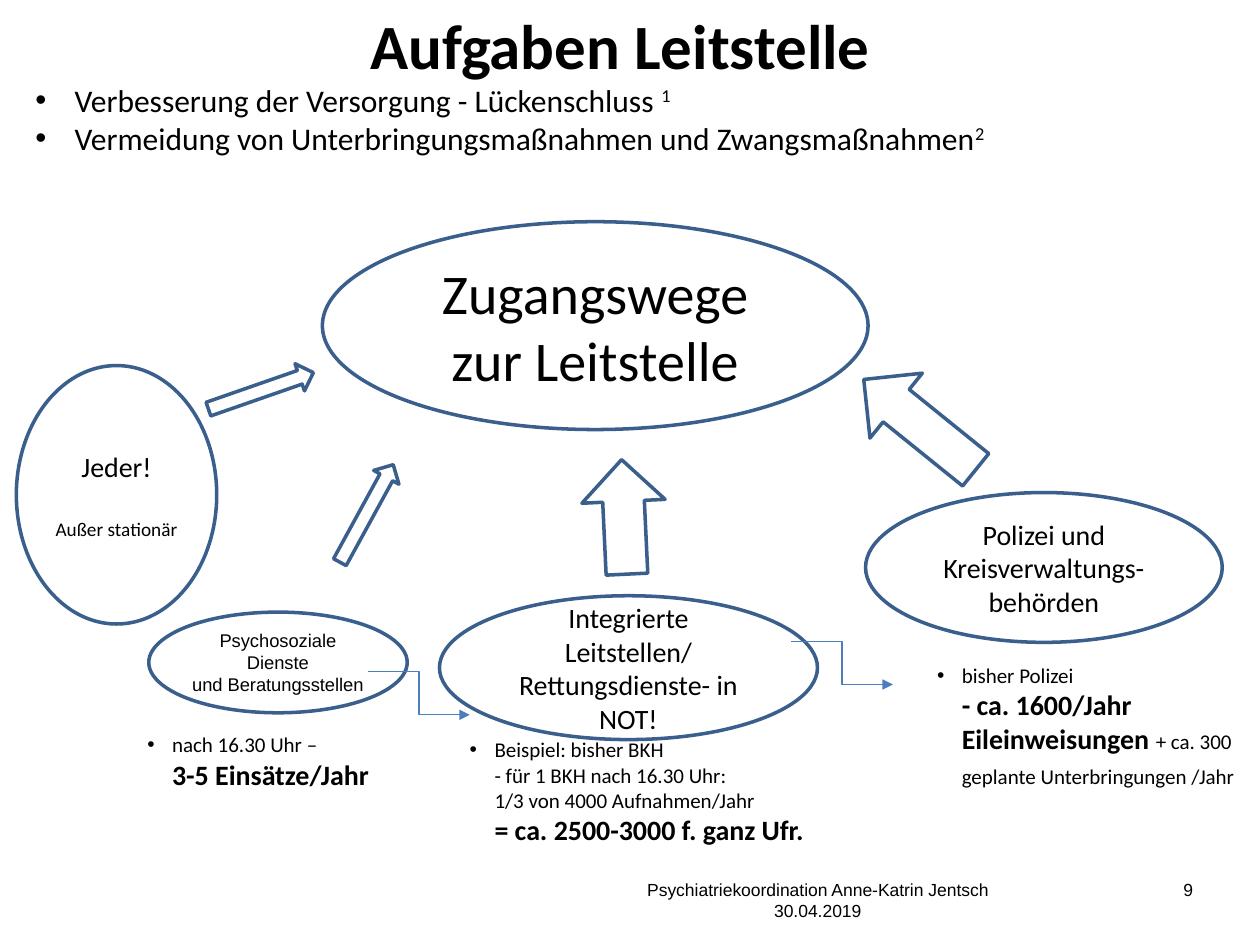
from lxml import etree
from pptx import Presentation
from pptx import util as u
from pptx.dml.color import RGBColor
from pptx.enum import shapes, text
from pptx.oxml.ns import qn

BLACK = RGBColor(0x00, 0x00, 0x00)
WHITE = RGBColor(0xFF, 0xFF, 0xFF)
OUTLINE = RGBColor(0x3A, 0x5F, 0x8C)
CONNECTOR = RGBColor(0x4B, 0x7E, 0xBC)
CENTER = text.PP_ALIGN.CENTER
TOP = text.MSO_ANCHOR.TOP


def cm(*values):
    return [u.Cm(v) for v in values]


def place(sp, box):
    sp.left, sp.top, sp.width, sp.height = cm(*box)


def add_run(p, content, size, bold=False, font="Calibri", superscript=False):
    r = p.add_run()
    r.text = content
    r.font.size = u.Pt(size)
    r.font.bold = bold
    r.font.name = font
    r.font.color.rgb = BLACK
    if superscript:
        r.font._element.set("baseline", "30000")


def indent(p, hang, bullet=True):
    """Indent a paragraph, with a hanging bullet or aligned to its text."""
    pPr = p._p.get_or_add_pPr()
    pPr.set("marL", str(u.Cm(hang)))
    pPr.set("indent", str(-u.Cm(hang) if bullet else 0))
    if bullet:
        etree.SubElement(pPr, qn("a:buFont"), typeface="Arial")
        etree.SubElement(pPr, qn("a:buChar"), char="•")
    else:
        etree.SubElement(pPr, qn("a:buNone"))


def set_frame(sp, anchor=TOP):
    tf = sp.text_frame
    tf.word_wrap = True
    tf.auto_size = text.MSO_AUTO_SIZE.NONE
    tf.vertical_anchor = anchor
    return tf


def add_outline_shape(s, kind, box, rotation=0):
    sp = s.shapes.add_shape(kind, *cm(*box))
    sp.shadow.inherit = False
    sp.fill.background()
    sp.line.color.rgb = OUTLINE
    sp.line.width = u.Pt(2)
    sp.rotation = rotation
    return sp


def add_ellipse(s, box, paragraphs, font="Calibri", side=0.25):
    """Draw an ellipse; paragraphs holds (text, size, space before)."""
    sp = add_outline_shape(s, shapes.MSO_SHAPE.OVAL, box)
    tf = set_frame(sp, text.MSO_ANCHOR.MIDDLE)
    tf.margin_left = tf.margin_right = u.Cm(side)
    for i, (content, size, before) in enumerate(paragraphs):
        p = tf.add_paragraph() if i else tf.paragraphs[0]
        p.alignment = CENTER
        p.space_before = u.Pt(before)
        add_run(p, content, size, font=font)
    return sp


def add_elbow(s, x, y):
    c = s.shapes.add_connector(shapes.MSO_CONNECTOR.ELBOW,
                               *cm(x, y, x + 2.05, y + 0.87))
    c.line.color.rgb = CONNECTOR
    c.line.width = u.Pt(0.75)
    etree.SubElement(c.line._get_or_add_ln(), qn("a:tailEnd"), type="triangle")
    etree.SubElement(c._element.spPr, qn("a:effectLst"))


def add_note(s, box, lines):
    """Add a bulleted note; each line is a list of (text, size, bold)."""
    sp = s.shapes.add_textbox(*cm(*box))
    p = set_frame(sp).paragraphs[0]
    indent(p, 0.5)
    for i, line in enumerate(lines):
        if i:
            p.add_line_break()
        for content, size, bold in line:
            add_run(p, content, size, bold)
    return sp


def add_footer(s, box, lines, alignment):
    tf = set_frame(s.shapes.add_textbox(*cm(*box)))
    p = tf.paragraphs[0]
    p.alignment = alignment
    for i, line in enumerate(lines):
        if i:
            p.add_line_break()
        add_run(p, line, 10, font="Arial")


def fill_title(sp):
    place(sp, (1.09, 0.13, 22.83, 2.21))
    tf = set_frame(sp)
    tf.margin_top = 0
    p = tf.paragraphs[0]
    p.alignment = CENTER
    add_run(p, "Aufgaben Leitstelle", 36, bold=True)


def fill_goals(sp):
    place(sp, (0.46, 1.5, 22.83, 1.8))
    tf = set_frame(sp)
    goals = [("Verbesserung der Versorgung - Lückenschluss ", "1"),
             ("Vermeidung von Unterbringungsmaßnahmen und Zwangsmaßnahmen", "2")]
    for i, (goal, mark) in enumerate(goals):
        p = tf.add_paragraph() if i else tf.paragraphs[0]
        p.space_before = u.Pt(0)
        indent(p, 0.79)
        add_run(p, goal, 18)
        add_run(p, mark, 18, superscript=True)


def main():
    prs = Presentation()
    prs.slide_width, prs.slide_height = cm(25.4, 19.05)
    s = prs.slides.add_slide(prs.slide_layouts[1])
    fill_title(s.shapes.title)
    fill_goals(s.placeholders[1])

    hub = add_ellipse(s, (6.5, 4.47, 11, 4.19),
                      [("Zugangswege zur Leitstelle", 32, 0)])
    hub.fill.solid()
    hub.fill.fore_color.rgb = WHITE
    add_ellipse(s, (0.33, 7.37, 4.04, 5.21),
                [("Jeder!", 16, 0), ("Außer stationär", 11, 19.5)], side=0.1)
    add_ellipse(s, (3, 12.34, 5.21, 2.03),
                [("Psychosoziale Dienste", 10.5, 0),
                 ("und Beratungsstellen", 10.5, 0)], font="Arial", side=0.1)
    add_ellipse(s, (17.45, 9.93, 7.19, 3.02),
                [("Polizei und Kreisverwaltungs-behörden", 16, 0)])
    add_ellipse(s, (8.86, 12.01, 7.62, 2.9),
                [("Integrierte Leitstellen/ Rettungsdienste- in NOT!", 16, 0)])

    for box, rotation in [((4.14, 7.59, 2.24, 0.58), 340.8),
                          ((6.27, 10.06, 2.24, 0.58), 298.7),
                          ((11.43, 9.58, 2.31, 1.68), 267.3),
                          ((17.09, 7.72, 2.9, 1.68), 218.9)]:
        add_outline_shape(s, shapes.MSO_SHAPE.RIGHT_ARROW, box, rotation)
    add_elbow(s, 7.42, 13.54)
    add_elbow(s, 15.95, 12.93)

    services = add_note(s, (2.72, 14.63, 5.54, 1.96),
                        [[("nach 16.30 Uhr –", 12, False)],
                         [("3-5 Einsätze/Jahr", 16, True)]])
    services.fill.solid()
    services.fill.fore_color.rgb = WHITE
    add_note(s, (9.22, 14.73, 7.82, 3),
             [[("Beispiel: bisher BKH", 12, False)],
              [("- für 1 BKH nach 16.30 Uhr:", 12, False)],
              [("1/3 von 4000 Aufnahmen/Jahr", 12, False)],
              [("= ca. 2500-3000 f. ganz Ufr.", 16, True)]])
    police = add_note(s, (18.64, 13.23, 6.78, 3.94),
                      [[("bisher Polizei", 12, False)],
                       [("- ca. 1600/Jahr", 16, True)],
                       [("Eileinweisungen ", 16, True), ("+ ca. 300", 12, False)]])
    p = police.text_frame.add_paragraph()
    p.space_before = u.Pt(5)
    indent(p, 0.5, bullet=False)
    add_run(p, "geplante Unterbringungen /Jahr", 12)

    add_footer(s, (11.86, 17.6, 9.25, 1.02),
               ["Psychiatriekoordination Anne-Katrin Jentsch", "30.04.2019"], CENTER)
    add_footer(s, (21.89, 17.6, 2.41, 1.02), ["9"], text.PP_ALIGN.RIGHT)
    prs.save("out.pptx")


if __name__ == "__main__":
    main()
